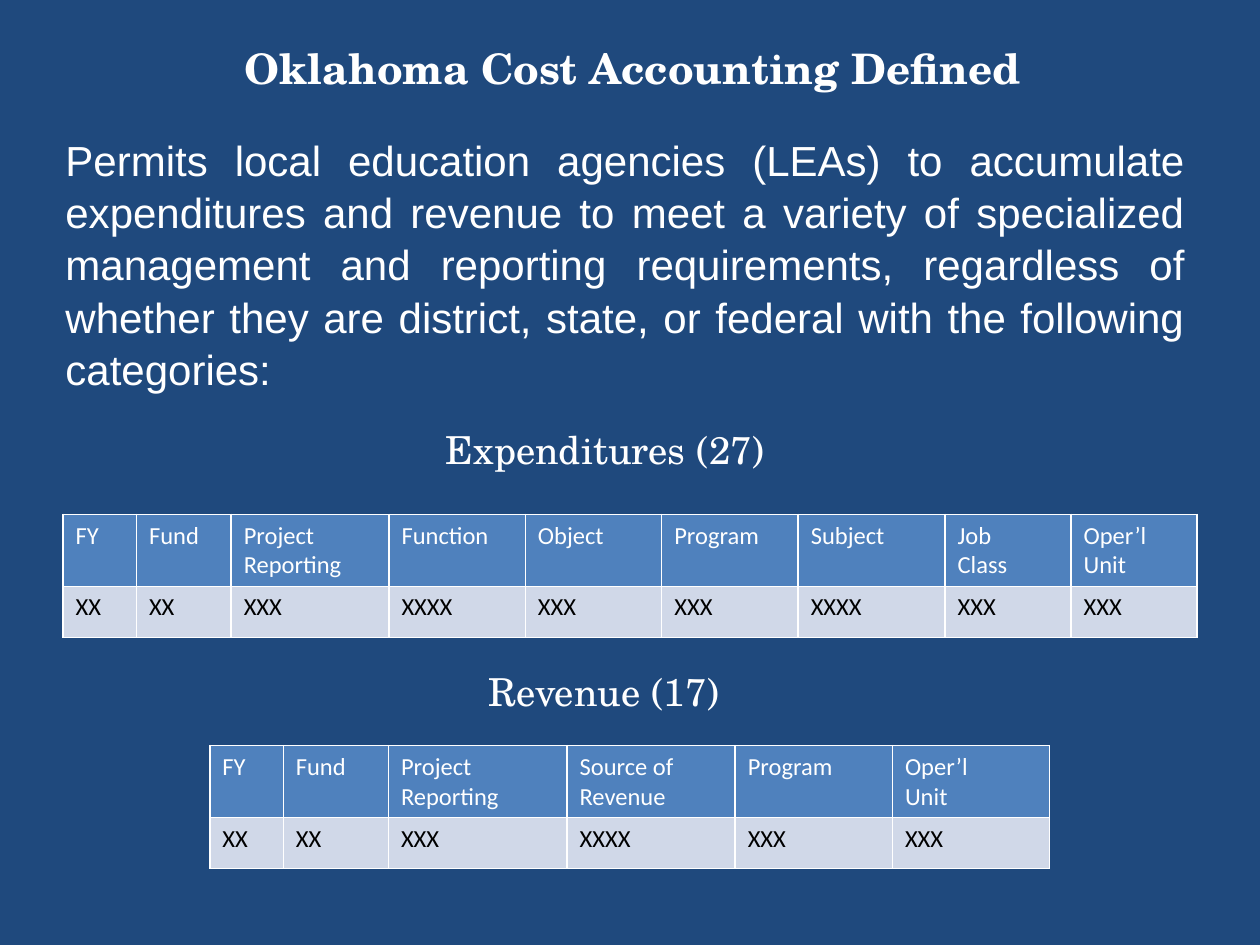
from lxml.etree import SubElement
from pptx import Presentation
from pptx.dml.color import RGBColor
from pptx.enum.text import MSO_ANCHOR, MSO_AUTO_SIZE, PP_ALIGN
from pptx.oxml.ns import qn
from pptx.util import Cm, Pt

BACKGROUND, WHITE, BLACK = "1F497D", "FFFFFF", "000000"
HEADER_FILL, ROW_FILL = "4F81BD", "D0D8E8"
SERIF, SANS, TABLE_FONT = "TeX Gyre Schola", "Arial", "Calibri"

TITLE = "Oklahoma Cost Accounting Defined"
DEFINITION = (
    "Permits local education agencies (LEAs) to accumulate expenditures and "
    "revenue to meet a variety of specialized management and reporting "
    "requirements, regardless of whether they are district, state, or federal "
    "with the following categories:"
)
# Places are left, top, width, height in cm; columns are header, code, width.
SECTIONS = [
    {
        "heading": "Expenditures (27)",
        "heading_at": (8.74, 8.46, 8.05, 1.19),
        "table_at": (1.27, 10.37),
        "columns": [
            ("FY", "XX", 1.48),
            ("Fund", "XX", 1.91),
            ("Project\nReporting", "XXX", 3.18),
            ("Function", "XXXX", 2.75),
            ("Object", "XXX", 2.75),
            ("Program", "XXX", 2.75),
            ("Subject", "XXXX", 2.96),
            ("Job\nClass", "XXX", 2.54),
            ("Oper’l\nUnit", "XXX", 2.54),
        ],
    },
    {
        "heading": "Revenue (17)",
        "heading_at": (9.6, 13.34, 5.28, 1.19),
        "table_at": (4.23, 15.03),
        "columns": [
            ("FY", "XX", 1.48),
            ("Fund", "XX", 2.12),
            ("Project\nReporting", "XXX", 3.6),
            ("Source of\nRevenue", "XXXX", 3.39),
            ("Program", "XXX", 3.17),
            ("Oper’l\nUnit", "XXX", 3.17),
        ],
    },
]
ROW_HEIGHTS = (1.45, 1.03)


def color(hex_value):
    return RGBColor.from_string(hex_value)


def style(tf, font, size, hex_value, bold=False, align=None):
    for p in tf.paragraphs:
        p.font.name, p.font.size, p.font.bold = font, Pt(size), bold
        p.font.color.rgb = color(hex_value)
        p.alignment = align


def add_text(s, text, at, font, size, align=None):
    tf = s.shapes.add_textbox(*map(Cm, at)).text_frame
    tf.word_wrap = True
    tf.auto_size = MSO_AUTO_SIZE.SHAPE_TO_FIT_TEXT
    tf.text = text
    style(tf, font, size, WHITE, align=align)
    return tf


def add_borders(cell):
    tc_pr = cell._tc.get_or_add_tcPr()
    for side in ("L", "R", "T", "B"):
        line = SubElement(tc_pr, qn(f"a:ln{side}"), w=str(Pt(1)))
        fill = SubElement(line, qn("a:solidFill"))
        SubElement(fill, qn("a:srgbClr"), val=WHITE)


def add_code_table(s, columns, at):
    """Add a header row of category names above a row of code patterns."""
    headers, codes, widths = zip(*columns)
    size = (sum(widths), sum(ROW_HEIGHTS))
    table = s.shapes.add_table(2, len(columns), *map(Cm, at + size)).table
    for column, width in zip(table.columns, widths):
        column.width = Cm(width)
    rows = zip(table.rows, ROW_HEIGHTS, (headers, codes),
               (HEADER_FILL, ROW_FILL), (WHITE, BLACK))
    for row, height, texts, fill, text_color in rows:
        row.height = Cm(height)
        for cell, text in zip(row.cells, texts):
            cell.text = text
            style(cell.text_frame, TABLE_FONT, 14, text_color)
            add_borders(cell)
            cell.fill.solid()
            cell.fill.fore_color.rgb = color(fill)


def main():
    prs = Presentation()
    prs.slide_width, prs.slide_height = Cm(25.4), Cm(19.05)
    s = prs.slides.add_slide(prs.slide_layouts[5])
    s.background.fill.solid()
    s.background.fill.fore_color.rgb = color(BACKGROUND)

    title = s.shapes.title
    title.left, title.top, title.width, title.height = map(
        Cm, (1.32, 0.43, 22.86, 1.88))
    title.text_frame.text = TITLE
    title.text_frame.vertical_anchor = MSO_ANCHOR.MIDDLE
    style(title.text_frame, SERIF, 24, WHITE, True, PP_ALIGN.CENTER)

    tf = add_text(s, DEFINITION, (1.07, 2.54, 23.06, 4.37), SANS, 24,
                  PP_ALIGN.JUSTIFY)
    tf.paragraphs[0].line_spacing = 1.04

    for section in SECTIONS:
        add_text(s, section["heading"], section["heading_at"], SERIF, 22)
        add_code_table(s, section["columns"], section["table_at"])

    prs.save("out.pptx")


if __name__ == "__main__":
    main()
